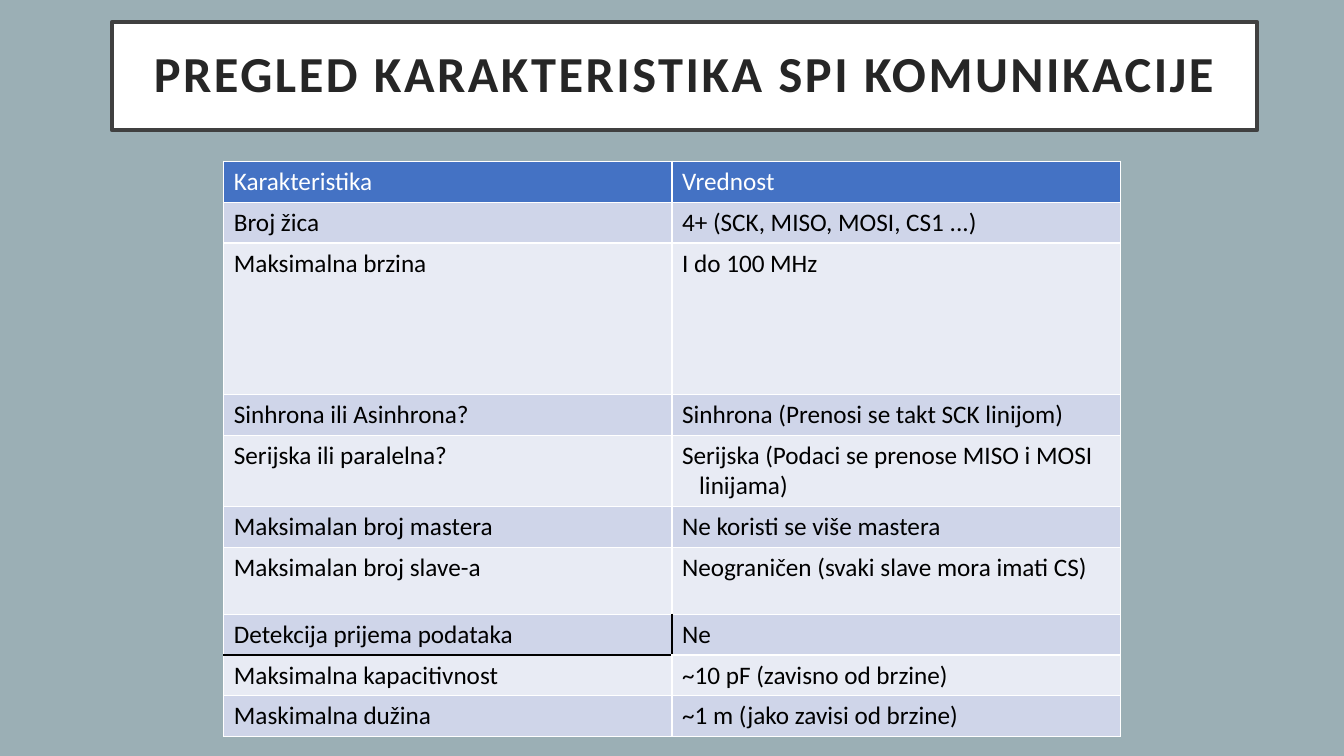
from dataclasses import dataclass

from lxml import etree
from pptx import Presentation
from pptx.dml.color import RGBColor
from pptx.enum.text import MSO_ANCHOR, MSO_AUTO_SIZE, PP_ALIGN
from pptx.oxml.ns import qn
from pptx.util import Inches, Pt

CENTER, LEFT = PP_ALIGN.CENTER, PP_ALIGN.LEFT
MIDDLE = MSO_ANCHOR.MIDDLE
NO_FIT = MSO_AUTO_SIZE.NONE
SLIDE_W, SLIDE_H = 13.33, 7.5
TITLE_BOX = (1.11, 0.22, 11.36, 1.07)
TABLE_BOX = (2.22, 1.6, 8.89, 5.48)
ROW_H = 0.38
TALL_ROWS = {2: 1.5, 4: 0.66, 6: 0.66}
HANGING = 0.17
MARKED_SIDES = {(7, 0): "RB", (7, 1): "L", (8, 0): "T"}
ROWS = [
    ("Karakteristika", "Vrednost"),
    ("Broj žica", "4+ (SCK, MISO, MOSI, CS1 ...)"),
    ("Maksimalna brzina", "I do 100 MHz"),
    ("Sinhrona ili Asinhrona?", "Sinhrona (Prenosi se takt SCK linijom)"),
    ("Serijska ili paralelna?", "Serijska (Podaci se prenose MISO i MOSI linijama)"),
    ("Maksimalan broj mastera", "Ne koristi se više mastera"),
    ("Maksimalan broj slave-a", "Neograničen (svaki slave mora imati CS)"),
    ("Detekcija prijema podataka", "Ne"),
    ("Maksimalna kapacitivnost", "~10 pF (zavisno od brzine)"),
    ("Maskimalna dužina", "~1 m (jako zavisi od brzine)"),
]


@dataclass(frozen=True)
class Theme:
    """Colours, font and type sizes of the slide."""
    font: str = "Calibri"
    title_size: int = 36
    cell_size: int = 18
    background: str = "9BAFB5"
    paper: str = "FFFFFF"
    frame: str = "404040"
    title: str = "262626"
    ink: str = "000000"
    header: str = "4472C4"
    bands: tuple = ("E8EBF4", "CFD5E9")


THEME = Theme()


def paint(fill, color):
    """Give a fill one solid colour."""
    fill.solid()
    fill.fore_color.rgb = RGBColor.from_string(color)


def write(tf, text, size, color, bold=False, align=LEFT, line_spacing=None,
          tracking=None, hanging=None):
    """Write one formatted paragraph into a text frame."""
    p = tf.paragraphs[0]
    p.alignment = align
    if line_spacing:
        p.line_spacing = line_spacing
    if hanging:
        pPr = p._p.get_or_add_pPr()
        pPr.set("marL", str(Inches(hanging)))
        pPr.set("indent", str(-Inches(hanging)))
    r = p.add_run()
    r.text = text
    r.font.name = THEME.font
    r.font.size = Pt(size)
    r.font.bold = bold
    r.font.color.rgb = RGBColor.from_string(color)
    if tracking:
        r._r.get_or_add_rPr().set("spc", str(int(tracking * 100)))


def add_borders(cell, marked):
    """Draw the four cell borders, with the marked sides in ink."""
    tcPr = cell._tc.get_or_add_tcPr()
    for side in "LRTB":
        ln = etree.SubElement(tcPr, qn(f"a:ln{side}"), w=str(Pt(0.96)))
        fill = etree.SubElement(ln, qn("a:solidFill"))
        color = THEME.ink if side in marked else THEME.paper
        etree.SubElement(fill, qn("a:srgbClr"), val=color)


def add_title(slide, box, text):
    """Place the framed title in its box."""
    sp = slide.shapes.title
    sp.left, sp.top, sp.width, sp.height = map(Inches, box)
    paint(sp.fill, THEME.paper)
    paint(sp.line.fill, THEME.frame)
    sp.line.width = Pt(3)
    tf = sp.text_frame
    tf.auto_size = NO_FIT
    tf.word_wrap = True
    tf.vertical_anchor = MIDDLE
    tf.margin_left = tf.margin_right = Inches(0.3)
    tf.margin_top = tf.margin_bottom = Inches(0.2)
    write(tf, text, THEME.title_size, THEME.title, bold=True, align=CENTER,
          line_spacing=0.9, tracking=1.8)


def add_features(slide, box, rows):
    """Place the two-column table of features in its box."""
    columns = len(rows[0])
    table = slide.shapes.add_table(len(rows), columns, *map(Inches, box)).table
    table.first_row = table.horz_banding = False
    for column in table.columns:
        column.width = Inches(box[2] / columns)
    for i, row in enumerate(rows):
        table.rows[i].height = Inches(TALL_ROWS.get(i, ROW_H))
        background = THEME.bands[i % 2] if i else THEME.header
        for j, text in enumerate(row):
            cell = table.cell(i, j)
            add_borders(cell, MARKED_SIDES.get((i, j), ""))
            paint(cell.fill, background)
            write(cell.text_frame, text, THEME.cell_size,
                  THEME.ink if i else THEME.paper, hanging=HANGING)


def main():
    """Build and save the presentation."""
    prs = Presentation()
    prs.slide_width, prs.slide_height = Inches(SLIDE_W), Inches(SLIDE_H)
    slide = prs.slides.add_slide(prs.slide_layouts.get_by_name("Title Only"))
    paint(slide.background.fill, THEME.background)
    add_title(slide, TITLE_BOX, "PREGLED KARAKTERISTIKA SPI KOMUNIKACIJE")
    add_features(slide, TABLE_BOX, ROWS)
    prs.save("out.pptx")


if __name__ == "__main__":
    main()
